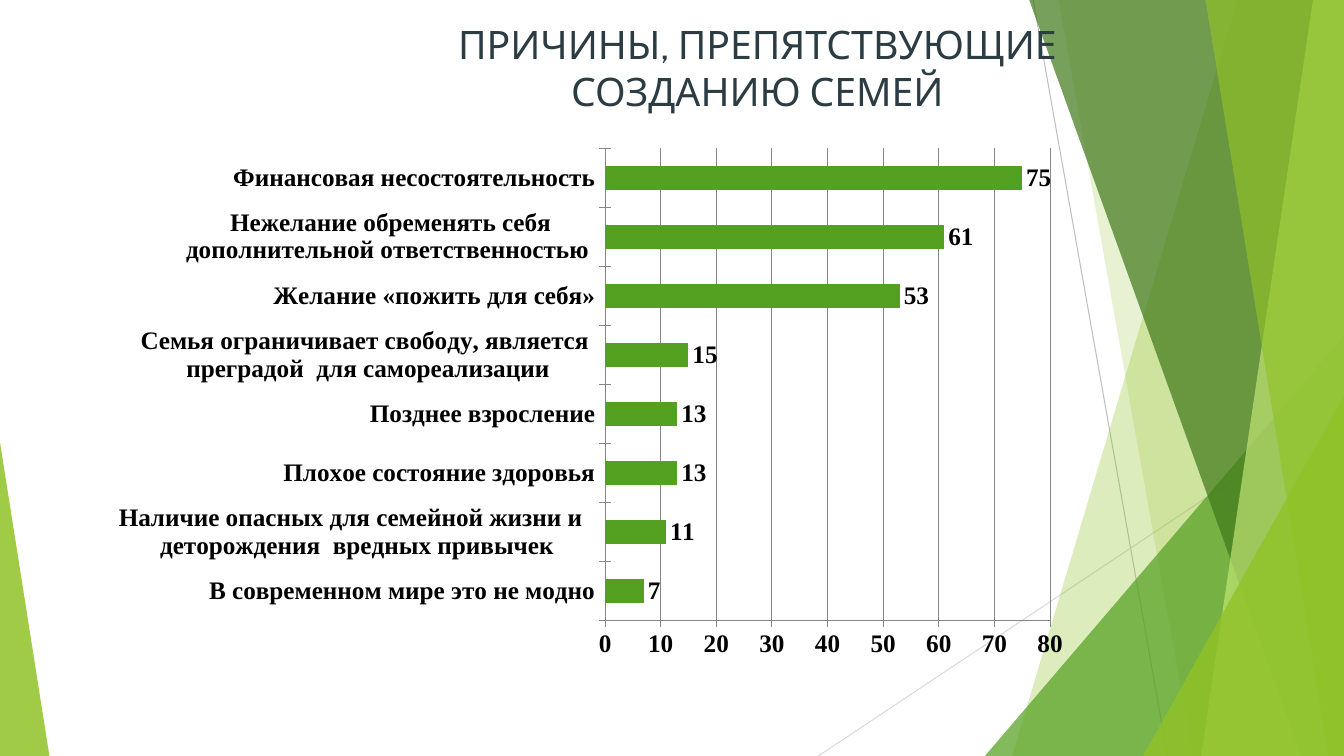
from dataclasses import dataclass

from pptx import Presentation
from pptx.chart.data import CategoryChartData
from pptx.dml.color import RGBColor
from pptx.enum.chart import XL_CHART_TYPE as ChartType, XL_LABEL_POSITION as LabelPosition
from pptx.enum.chart import XL_TICK_MARK as TickMark
from pptx.enum.shapes import MSO_CONNECTOR as Connector, MSO_SHAPE as Shape
from pptx.enum.text import MSO_ANCHOR as Anchor, PP_ALIGN as Align
from pptx.oxml import parse_xml
from pptx.oxml.ns import nsdecls, qn
from pptx.util import Pt
from lxml.etree import SubElement

WIDTH, HEIGHT = 960, 540


@dataclass(frozen=True)
class Theme:
    lime: str = "90C226"
    green: str = "54A021"
    forest: str = "3F7819"
    pale: str = "C0E474"
    title: str = "2C3C43"
    text: str = "000000"
    axis: str = "868686"
    dark_line: str = "BFBFBF"
    light_line: str = "D9D9D9"
    title_font: str = "Cabin"
    chart_font: str = "Times New Roman"
    title_size: int = 28
    chart_size: int = 18
    line_width: float = 0.75


class SlideBuilder:
    def __init__(self, slide, theme):
        self.slide = slide
        self.theme = theme

    def line(self, start, end, color):
        connector = self.slide.shapes.add_connector(
            Connector.STRAIGHT, *(Pt(value) for value in (*start, *end)))
        connector.line.color.rgb = RGBColor.from_string(color)
        connector.line.width = Pt(self.theme.line_width)
        SubElement(connector.element.spPr, qn("a:effectLst"))

    def paint(self, shape, color, opacity):
        shape.shadow.inherit = False
        shape.fill.solid()
        shape.fill.fore_color.rgb = RGBColor.from_string(color)
        shape.line.fill.background()
        color_element = shape.element.spPr.find(qn("a:solidFill"))[0]
        SubElement(color_element, qn("a:alpha"), val=str(opacity * 1000))

    def shard(self, top_x, bottom_x, color, opacity):
        top = -0.6
        corners = [(WIDTH, top), (WIDTH, HEIGHT), (bottom_x, HEIGHT)]
        builder = self.slide.shapes.build_freeform(Pt(top_x), Pt(top))
        builder.add_line_segments([(Pt(x), Pt(y)) for x, y in corners], close=True)
        self.paint(builder.convert_to_shape(), color, opacity)

    def corner_triangle(self, left, width, height, apex, color, opacity):
        shape = self.slide.shapes.add_shape(
            Shape.ISOSCELES_TRIANGLE, Pt(left), Pt(HEIGHT - height), Pt(width), Pt(height))
        shape.adjustments[0] = apex
        self.paint(shape, color, opacity)

    def title(self, text, left, top, width, height):
        box = self.slide.shapes.add_textbox(Pt(left), Pt(top), Pt(width), Pt(height))
        frame = box.text_frame
        frame.word_wrap = True
        frame.vertical_anchor = Anchor.MIDDLE
        frame.text = text
        paragraph = frame.paragraphs[0]
        paragraph.alignment = Align.CENTER
        font = paragraph.runs[0].font
        font.name = self.theme.title_font
        font.size = Pt(self.theme.title_size)
        font.color.rgb = RGBColor.from_string(self.theme.title)

    def axis_line(self, line):
        line.color.rgb = RGBColor.from_string(self.theme.axis)
        line.width = Pt(self.theme.line_width)

    def bar_chart(self, reasons, left, top, width, height, plot):
        data = CategoryChartData()
        data.categories = [name for name, _ in reasons]
        data.add_series("Series 1", [value for _, value in reasons])
        chart = self.slide.shapes.add_chart(
            ChartType.BAR_CLUSTERED, Pt(left), Pt(top), Pt(width), Pt(height), data).chart
        chart.has_legend = False
        chart.has_title = False
        chart.font.name = self.theme.chart_font
        chart.font.size = Pt(self.theme.chart_size)
        chart.font.bold = True
        chart.font.color.rgb = RGBColor.from_string(self.theme.text)

        bars = chart.plots[0]
        bars.gap_width = 150
        bars.vary_by_categories = False
        fill = bars.series[0].format.fill
        fill.solid()
        fill.fore_color.rgb = RGBColor.from_string(self.theme.green)
        labels = bars.series[0].data_labels
        labels.show_value = True
        labels.position = LabelPosition.OUTSIDE_END

        for axis in (chart.category_axis, chart.value_axis):
            axis.major_tick_mark = TickMark.CROSS
            axis.minor_tick_mark = TickMark.NONE
            self.axis_line(axis.format.line)
        chart.value_axis.minimum_scale = 0
        chart.value_axis.maximum_scale = 80
        chart.value_axis.major_unit = 10
        chart.value_axis.has_major_gridlines = True
        self.axis_line(chart.value_axis.major_gridlines.format.line)
        self.place_plot(chart, plot)

    def place_plot(self, chart, plot):
        area = chart.element.find(".//" + qn("c:plotArea"))
        for layout in area.findall(qn("c:layout")):
            area.remove(layout)
        sizes = "".join(f'<c:{key} val="{value}"/>' for key, value in zip("xywh", plot))
        area.insert(0, parse_xml(
            f'<c:layout {nsdecls("c")}><c:manualLayout><c:layoutTarget val="inner"/>'
            f'<c:xMode val="edge"/><c:yMode val="edge"/>{sizes}'
            '</c:manualLayout></c:layout>'))


REASONS = [
    ("В современном мире это не модно", 7),
    ("Наличие опасных для семейной жизни и   деторождения  вредных привычек", 11),
    ("Плохое состояние здоровья", 13),
    ("Позднее взросление", 13),
    ("Семья ограничивает свободу, является  преградой  для самореализации", 15),
    ("Желание «пожить для себя»", 53),
    ("Нежелание обременять себя дополнительной ответственностью ", 61),
    ("Финансовая несостоятельность", 75),
]


def main():
    presentation = Presentation()
    presentation.slide_width = Pt(WIDTH)
    presentation.slide_height = Pt(HEIGHT)
    theme = Theme()
    builder = SlideBuilder(
        presentation.slides.add_slide(presentation.slide_layouts[6]), theme)

    builder.line((738, 0), (834, HEIGHT), theme.dark_line)
    builder.line((WIDTH, 290), (584.6, HEIGHT), theme.light_line)
    builder.shard(884, 723, theme.lime, 30)
    builder.shard(756, 852, theme.lime, 20)
    builder.corner_triangle(703.5, 256.5, 300, 1, theme.green, 72)
    builder.shard(735, 929.5, theme.forest, 70)
    builder.shard(938, 858, theme.pale, 70)
    builder.shard(861, 949, theme.lime, 65)
    builder.corner_triangle(816.5, 143.5, 257, 1, theme.lime, 80)
    builder.corner_triangle(0, 35.3, 224, 0, theme.lime, 85)

    builder.title("ПРИЧИНЫ, ПРЕПЯТСТВУЮЩИЕ СОЗДАНИЮ СЕМЕЙ", 259, 13, 564, 70)
    builder.bar_chart(REASONS, 65.5, 88.5, 698.5, 436.5, (0.525, 0.04, 0.455, 0.773))
    presentation.save("out.pptx")


if __name__ == "__main__":
    main()
